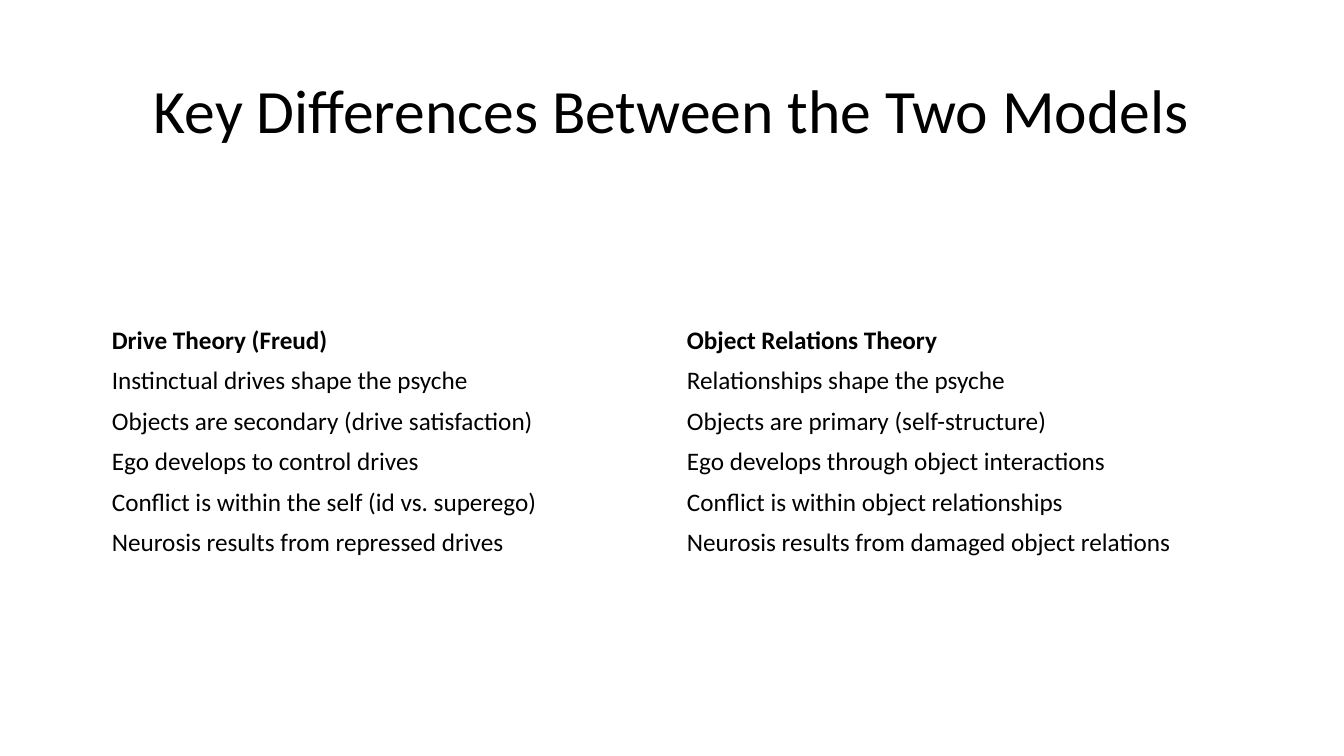
from dataclasses import dataclass

from pptx import Presentation
from pptx.dml.color import RGBColor
from pptx.enum.text import MSO_ANCHOR, PP_ALIGN
from pptx.slide import Slide
from pptx.text.text import _Paragraph as Paragraph
from pptx.util import Pt

COLORS = {"text": "000000"}
FONT_NAME = "Calibri"
TITLE = "Key Differences Between the Two Models"


@dataclass(frozen=True)
class Comparison:
    drive_theory: str
    object_relations: str
    bold: bool = False


@dataclass(frozen=True)
class Box:
    left: float
    top: float
    width: float
    height: float

    def lengths(self) -> tuple[Pt, Pt, Pt, Pt]:
        return Pt(self.left), Pt(self.top), Pt(self.width), Pt(self.height)


TITLE_BOX = Box(66, 28.8, 828, 104.4)
TABLE_BOX = Box(72.72, 228.96, 821.52, 172.8)

COMPARISONS = [
    Comparison("Drive Theory (Freud)", "Object Relations Theory", bold=True),
    Comparison("Instinctual drives shape the psyche", "Relationships shape the psyche"),
    Comparison("Objects are secondary (drive satisfaction)", "Objects are primary (self-structure)"),
    Comparison("Ego develops to control drives", "Ego develops through object interactions"),
    Comparison("Conflict is within the self (id vs. superego)", "Conflict is within object relationships"),
    Comparison("Neurosis results from repressed drives", "Neurosis results from damaged object relations"),
]


def write_text(paragraph: Paragraph, text: str, size: float, bold: bool = False) -> None:
    run = paragraph.add_run()
    run.text = text
    font_format = {"name": FONT_NAME, "size": Pt(size), "bold": bold}
    for attribute, value in font_format.items():
        setattr(run.font, attribute, value)
    run.font.color.rgb = RGBColor.from_string(COLORS["text"])


def add_title(slide: Slide) -> None:
    text_frame = slide.shapes.add_textbox(*TITLE_BOX.lengths()).text_frame
    text_frame.word_wrap = True
    text_frame.vertical_anchor = MSO_ANCHOR.MIDDLE
    paragraph = text_frame.paragraphs[0]
    paragraph.alignment = PP_ALIGN.CENTER
    paragraph.line_spacing = 0.9
    write_text(paragraph, TITLE, 44)


def add_comparison_table(slide: Slide) -> None:
    table = slide.shapes.add_table(len(COMPARISONS), 2, *TABLE_BOX.lengths()).table
    table_format = {"first_row": False, "horz_banding": False}
    for attribute, value in table_format.items():
        setattr(table, attribute, value)
    for row, comparison in zip(table.rows, COMPARISONS):
        texts = (comparison.drive_theory, comparison.object_relations)
        for cell, text in zip(row.cells, texts):
            cell.fill.background()
            cell.vertical_anchor = MSO_ANCHOR.MIDDLE
            write_text(cell.text_frame.paragraphs[0], text, 18, comparison.bold)


def main() -> None:
    presentation = Presentation()
    presentation.slide_width = Pt(960)
    presentation.slide_height = Pt(540)
    slide = presentation.slides.add_slide(presentation.slide_layouts[6])
    add_title(slide)
    add_comparison_table(slide)
    presentation.save("out.pptx")


if __name__ == "__main__":
    main()
